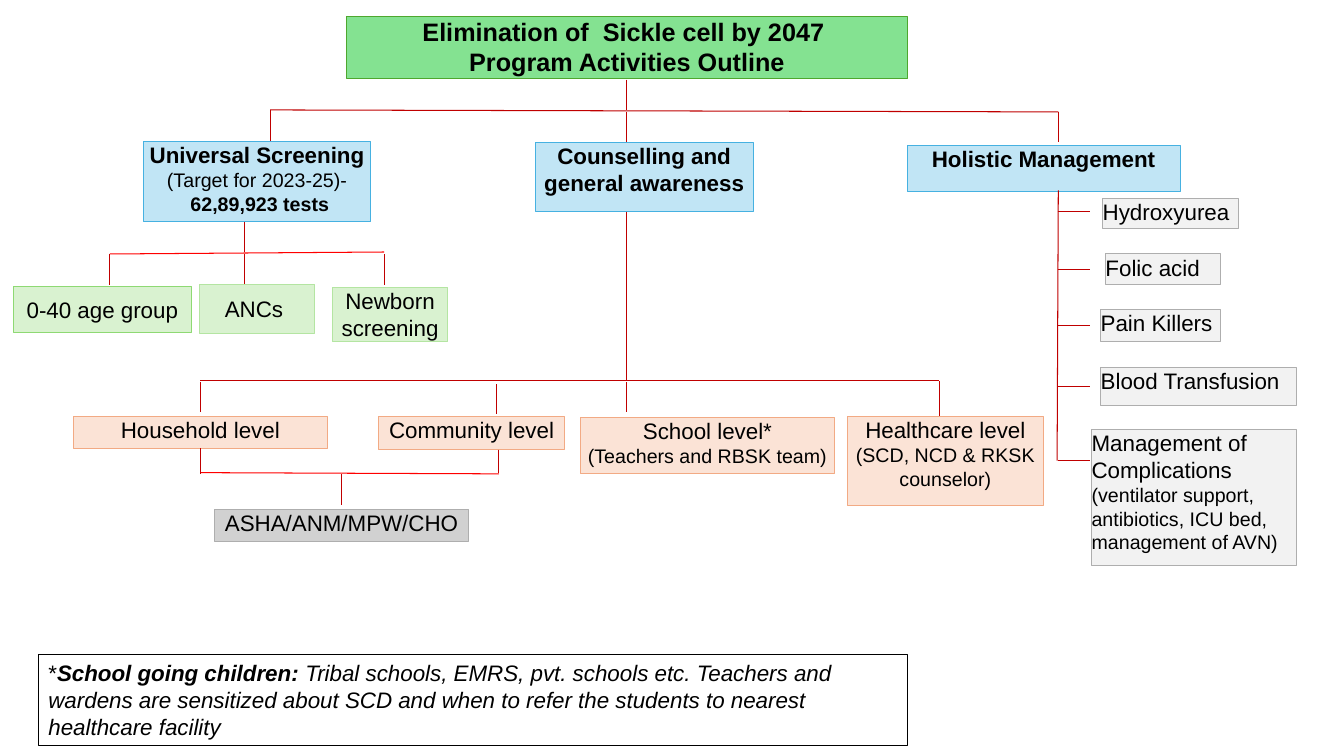
from pptx import Presentation
from pptx import util as u
from pptx.dml.color import RGBColor
from pptx.enum import shapes, text
from pptx.oxml.ns import qn
from lxml import etree

BLACK = RGBColor(0x00, 0x00, 0x00)
WHITE = RGBColor(0xFF, 0xFF, 0xFF)
DARK_RED = RGBColor(0xC0, 0x00, 0x00)
RED = RGBColor(0xFF, 0x00, 0x00)
TITLE_FILL = RGBColor(0x84, 0xE2, 0x91)
TITLE_LINE = RGBColor(0x4E, 0xA7, 0x2E)
BLUE_FILL = RGBColor(0xC1, 0xE5, 0xF5)
BLUE_LINE = RGBColor(0x46, 0xB1, 0xE1)
GREEN_FILL = RGBColor(0xD9, 0xF2, 0xD0)
GREEN_LINE = RGBColor(0x8E, 0xD9, 0x73)
PALE_GREEN_LINE = RGBColor(0xB4, 0xE5, 0xA2)
PEACH_FILL = RGBColor(0xFB, 0xE3, 0xD6)
PEACH_LINE = RGBColor(0xF2, 0xAA, 0x84)
LIGHT_GREY = RGBColor(0xF2, 0xF2, 0xF2)
MID_GREY = RGBColor(0xD1, 0xD1, 0xD1)
GREY_LINE = RGBColor(0xAE, 0xAE, 0xAE)

CENTER, LEFT = text.PP_ALIGN.CENTER, text.PP_ALIGN.LEFT
TOP, MIDDLE = text.MSO_ANCHOR.TOP, text.MSO_ANCHOR.MIDDLE

BRANCHES = [
    ((3.61, 3.56, 5.74, 2.03),
     [[("Universal Screening", 16, "b")],
      [("(Target for 2023-25)-", 14, "")],
      [(" ", 14, ""), ("62,89,923 tests", 14, "b")]]),
    ((13.49, 3.58, 5.49, 1.75),
     [[("Counselling and general awareness", 16, "b")]]),
    ((22.86, 3.66, 6.88, 1.17), [[("Holistic Management", 16, "b")]]),
]
SCREENING_GROUPS = [
    ((0.33, 7.21, 4.5, 1.17), "0-40 age group", GREEN_LINE),
    ((5.03, 7.16, 2.9, 1.24), "ANCs ", PALE_GREEN_LINE),
    ((8.38, 7.24, 2.9, 1.37), "Newborn screening", PALE_GREEN_LINE),
]
LEVELS = [
    ((1.85, 10.49, 6.4, 0.81), [[("Household level", 16, "")]]),
    ((9.55, 10.49, 4.67, 0.84), [[("Community level", 16, "")]]),
    ((14.63, 10.52, 6.4, 1.42),
     [[("School level*", 16, "")], [("(Teachers and RBSK team)", 14, "")]]),
    ((21.36, 10.49, 4.93, 2.24),
     [[("Healthcare level", 16, "")],
      [("(SCD, NCD & RKSK counselor)", 14, "")]]),
]
TREATMENTS = [
    ((27.79, 5.0, 3.43, 0.76), 5.33, [[("Hydroxyurea", 16, "")]]),
    ((27.86, 6.4, 2.9, 0.76), 6.78, [[("Folic acid", 16, "")]]),
    ((27.74, 7.8, 3.02, 0.81), 8.2, [[("Pain Killers", 16, "")]]),
    ((27.74, 9.25, 4.93, 0.97), 9.73, [[("Blood Transfusion", 16, "")]]),
    ((27.51, 10.82, 5.16, 3.43), 11.61,
     [[("Management of", 16, "")],
      [("Complications ", 16, ""),
       ("(ventilator support, antibiotics, ICU bed, management of AVN)",
        14, "")]]),
]


def write(sp, paras, align, anchor, inset):
    tf = sp.text_frame
    tf.word_wrap = True
    tf.auto_size = text.MSO_AUTO_SIZE.NONE
    tf.vertical_anchor = anchor
    tf.margin_left = tf.margin_right = u.Cm(inset)
    tf.margin_top = tf.margin_bottom = u.Cm(inset / 2)
    for i, runs in enumerate(paras):
        p = tf.add_paragraph() if i else tf.paragraphs[0]
        p.alignment = align
        for words, size, style in runs:
            r = p.add_run()
            r.text = words
            r.font.name = "Arial"
            r.font.size = u.Pt(size)
            r.font.bold = "b" in style
            r.font.italic = "i" in style
            r.font.color.rgb = BLACK


def paint(sp, fill, line, width=0.75):
    sp.fill.solid()
    sp.fill.fore_color.rgb = fill
    sp.line.color.rgb = line
    sp.line.width = u.Pt(width)


def add_title(s, place, paras):
    sp = s.shapes.title
    sp.left, sp.top, sp.width, sp.height = map(u.Cm, place)
    paint(sp, TITLE_FILL, TITLE_LINE)
    write(sp, paras, CENTER, TOP, 0)


def add_box(s, place, paras, fill, line, align=CENTER, anchor=TOP,
            inset=0, width=0.75):
    sp = s.shapes.add_shape(shapes.MSO_SHAPE.RECTANGLE, *map(u.Cm, place))
    sp.shadow.inherit = False
    paint(sp, fill, line, width)
    write(sp, paras, align, anchor, inset)


def add_line(s, x1, y1, x2, y2, color=DARK_RED):
    c = s.shapes.add_connector(shapes.MSO_CONNECTOR.STRAIGHT,
                               *map(u.Cm, (x1, y1, x2, y2)))
    c.line.color.rgb = color
    c.line.width = u.Pt(0.75)
    etree.SubElement(c._element.spPr, qn("a:effectLst"))


def add_drops(s, drops):
    for x, top, bottom in drops:
        add_line(s, x, top, x, bottom)


def add_branches(s):
    add_line(s, 6.81, 2.77, 26.67, 2.82)
    add_drops(s, [(15.8, 2.01, 2.77), (6.81, 2.77, 3.56),
                  (15.8, 2.82, 3.58), (26.67, 2.82, 3.58)])
    for place, paras in BRANCHES:
        add_box(s, place, paras, BLUE_FILL, BLUE_LINE)


def add_screening(s):
    add_line(s, 2.77, 6.4, 9.68, 6.35, RED)
    add_drops(s, [(6.17, 5.59, 6.35)])
    add_drops(s, [(x, 6.4, 7.19) for x in (2.77, 6.15, 9.7)])
    for place, words, line in SCREENING_GROUPS:
        add_box(s, place, [[(words, 16, "")]], GREEN_FILL, line,
                anchor=MIDDLE)


def add_levels(s):
    add_line(s, 5.05, 9.6, 23.67, 9.6)
    add_drops(s, [(15.8, 5.33, 9.6), (5.05, 9.63, 10.39),
                  (12.52, 9.68, 10.44), (15.8, 9.63, 10.39),
                  (23.67, 9.6, 10.49)])
    for place, paras in LEVELS:
        add_box(s, place, paras, PEACH_FILL, PEACH_LINE)


def add_workers(s):
    add_box(s, (5.41, 12.83, 6.4, 0.81), [[("ASHA/ANM/MPW/CHO", 16, "")]],
            MID_GREY, GREY_LINE)
    add_line(s, 5.05, 11.91, 12.57, 11.94, RED)
    add_drops(s, [(5.05, 11.3, 11.94), (12.57, 11.33, 11.91),
                  (8.61, 11.94, 12.73)])


def add_treatments(s):
    add_line(s, 26.67, 4.8, 26.64, 11.61)
    for place, y, paras in TREATMENTS:
        add_line(s, 26.65, y, 27.46, y)
        add_box(s, place, paras, LIGHT_GREY, GREY_LINE, align=LEFT)


def main():
    prs = Presentation()
    prs.slide_width, prs.slide_height = u.Cm(33.87), u.Cm(19.05)
    s = prs.slides.add_slide(prs.slide_layouts[5])
    add_title(s, (8.74, 0.41, 14.12, 1.57),
              [[("Elimination of  Sickle cell by 2047 ", 18, "b")],
               [("Program Activities Outline", 18, "b")]])
    add_branches(s)
    add_screening(s)
    add_levels(s)
    add_treatments(s)
    add_workers(s)
    add_box(s, (0.97, 16.48, 21.89, 2.31),
            [[("*", 16, ""), ("School going children: ", 16, "bi"),
              ("Tribal schools, EMRS, pvt. schools etc. Teachers and wardens "
               "are sensitized about SCD and when to refer the students to "
               "nearest healthcare facility", 16, "i")]],
            WHITE, BLACK, align=LEFT, inset=0.25, width=0.25)
    prs.save("out.pptx")


if __name__ == "__main__":
    main()
